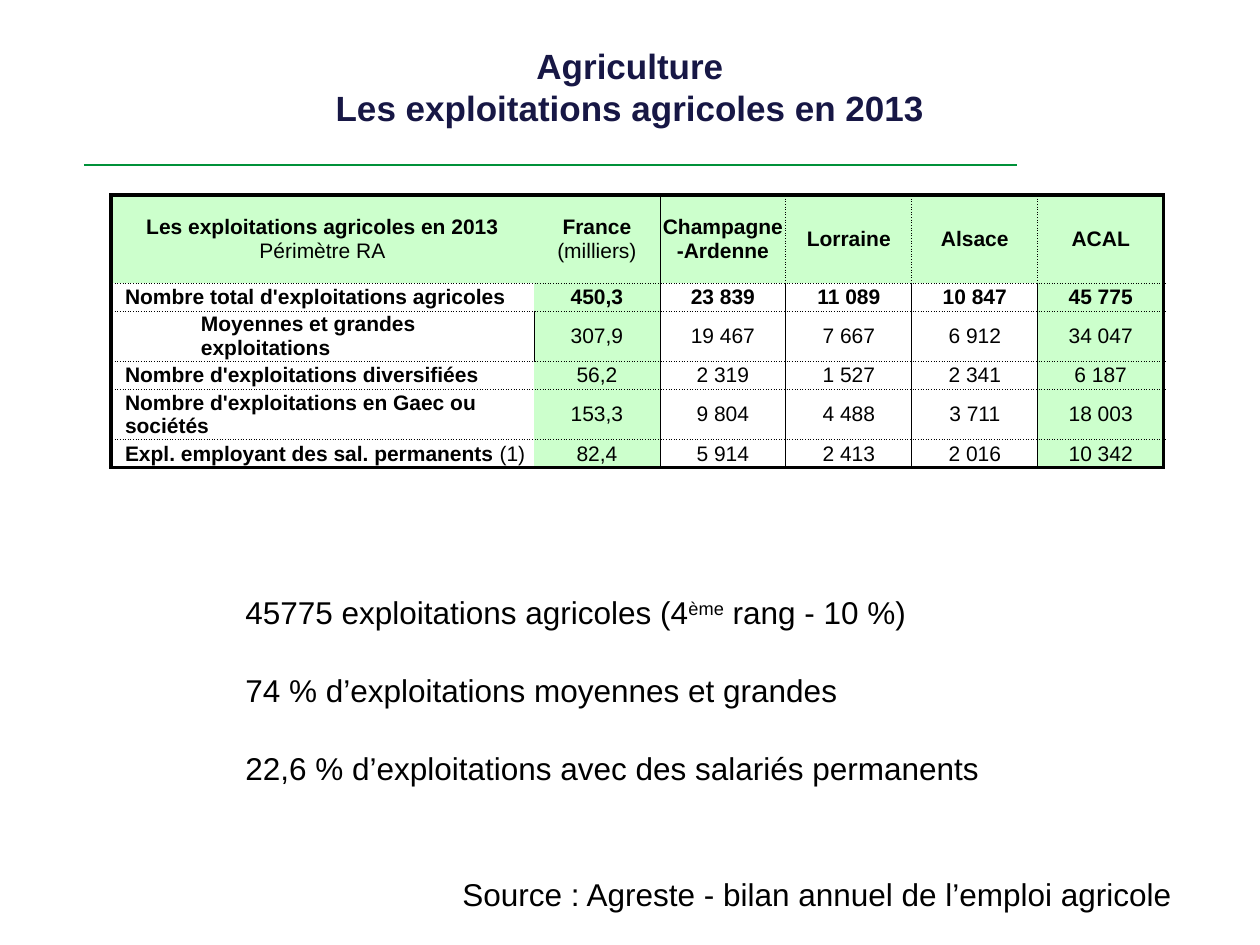
from lxml.etree import SubElement
from pptx import Presentation
from pptx.dml.color import RGBColor
from pptx.enum.shapes import MSO_CONNECTOR
from pptx.enum.text import MSO_ANCHOR, PP_ALIGN
from pptx.oxml.ns import qn
from pptx.util import Pt

PX = 914400 // 126
FONT = "Arial"
BLACK, NAVY, GREEN, MINT = "000000", "171745", "009139", "CCFFCC"
THICK, SOLID, DOTTED = (2, "solid"), (0.5, "solid"), (0.5, "sysDot")

COL_WIDTHS = [62, 361] + [126] * 5
ROW_HEIGHTS = [88, 28, 47, 28, 47, 28]
REGIONS = ["Champagne-Ardenne", "Lorraine", "Alsace", "ACAL"]
ROWS = [
    ("Nombre total d'exploitations agricoles", "450,3", "23 839", "11 089", "10 847", "45 775"),
    ("Moyennes et grandes exploitations", "307,9", "19 467", "7 667", "6 912", "34 047"),
    ("Nombre d'exploitations diversifiées", "56,2", "2 319", "1 527", "2 341", "6 187"),
    ("Nombre d'exploitations en Gaec ou sociétés", "153,3", "9 804", "4 488", "3 711", "18 003"),
    ("Expl. employant des sal. permanents", "82,4", "5 914", "2 413", "2 016", "10 342"),
]
TOTAL_ROW, SUB_ROW = 1, 2
FRANCE_COL, LAST_COL = 2, len(COL_WIDTHS) - 1
LAST_ROW = len(ROW_HEIGHTS) - 1


def px(*lengths):
    return [n * PX for n in lengths]


def rgb(hex_text):
    return RGBColor.from_string(hex_text)


def add_run(p, text, size, bold=False, color=BLACK):
    r = p.add_run()
    r.text = text
    r.font.name, r.font.size, r.font.bold = FONT, Pt(size), bold
    r.font.color.rgb = rgb(color)
    return r


def add_text_frame(s, box, wrap):
    tf = s.shapes.add_textbox(*px(*box)).text_frame
    tf.word_wrap = wrap
    return tf


def add_title(s, box):
    tf = add_text_frame(s, box, True)
    tf.vertical_anchor = MSO_ANCHOR.TOP
    p = tf.paragraphs[0]
    p.alignment = PP_ALIGN.CENTER
    add_run(p, "Agriculture", 20, True, NAVY)
    p.add_line_break()
    add_run(p, "Les exploitations agricoles en 2013", 20, True, NAVY)


def add_rule(s, x1, x2, y):
    line = s.shapes.add_connector(MSO_CONNECTOR.STRAIGHT, *px(x1, y, x2, y))
    line.line.color.rgb = rgb(GREEN)
    line.line.width = Pt(1.5)
    SubElement(line._element.spPr, qn("a:effectLst"))


def vertical_border(row, edge):
    """Border on the column edge numbered from the left, None for no line."""
    if edge in (0, LAST_COL + 1):
        return THICK
    if edge == 1:
        return None
    return DOTTED if row == 0 and edge > FRANCE_COL + 1 else SOLID


def horizontal_border(edge):
    return THICK if edge in (0, LAST_ROW + 1) else DOTTED


def set_borders(cell, row, col):
    sides = {
        "L": vertical_border(row, col),
        "R": vertical_border(row, col + 1),
        "T": horizontal_border(row),
        "B": horizontal_border(row + 1),
    }
    tc_pr = cell._tc.get_or_add_tcPr()
    for side, border in sides.items():
        ln = SubElement(tc_pr, qn(f"a:ln{side}"))
        if border is None:
            SubElement(ln, qn("a:noFill"))
            continue
        width, dash = border
        ln.set("w", str(Pt(width)))
        SubElement(SubElement(ln, qn("a:solidFill")), qn("a:srgbClr")).set("val", BLACK)
        SubElement(ln, qn("a:prstDash")).set("val", dash)


def format_cell(cell, row, col):
    set_borders(cell, row, col)
    if row == 0 or col in (FRANCE_COL, LAST_COL):
        cell.fill.solid()
        cell.fill.fore_color.rgb = rgb(MINT)
    else:
        cell.fill.background()
    cell.margin_left = cell.margin_right = cell.margin_top = cell.margin_bottom = 0
    cell.vertical_anchor = MSO_ANCHOR.MIDDLE
    p = cell.text_frame.paragraphs[0]
    p.font.size = Pt(12)
    if row == 0 or col >= FRANCE_COL:
        p.alignment = PP_ALIGN.CENTER


def fill_header(table):
    p = table.cell(0, 0).text_frame.paragraphs[0]
    add_run(p, "Les exploitations agricoles en 2013", 12, True)
    p.add_line_break()
    add_run(p, "Périmètre RA", 12)
    p = table.cell(0, FRANCE_COL).text_frame.paragraphs[0]
    add_run(p, "France", 12, True)
    add_run(p, " (milliers)", 12)
    for col, region in enumerate(REGIONS, FRANCE_COL + 1):
        add_run(table.cell(0, col).text_frame.paragraphs[0], region, 12, True)


def fill_row(table, row, label, values):
    indented = row == SUB_ROW
    cell = table.cell(row, int(indented))
    cell.margin_left = (28 if indented else 14) * PX
    p = cell.text_frame.paragraphs[0]
    add_run(p, label, 12, True)
    if row == LAST_ROW:
        add_run(p, " (1)", 12)
    for col, value in enumerate(values, FRANCE_COL):
        add_run(table.cell(row, col).text_frame.paragraphs[0], value, 12, row == TOTAL_ROW)


def add_farm_table(s, x, y):
    box = (x, y, sum(COL_WIDTHS), sum(ROW_HEIGHTS))
    table = s.shapes.add_table(len(ROW_HEIGHTS), len(COL_WIDTHS), *px(*box)).table
    table.first_row = table.horz_banding = False
    for column, width in zip(table.columns, px(*COL_WIDTHS)):
        column.width = width
    for table_row, height in zip(table.rows, px(*ROW_HEIGHTS)):
        table_row.height = height
    for row in range(len(ROW_HEIGHTS)):
        for col in range(len(COL_WIDTHS)):
            format_cell(table.cell(row, col), row, col)
        if row != SUB_ROW:
            table.cell(row, 0).merge(table.cell(row, 1))
    fill_header(table)
    for row, (label, *values) in enumerate(ROWS, 1):
        fill_row(table, row, label, values)


def add_key_figures(s, box):
    tf = add_text_frame(s, box, False)
    p = tf.paragraphs[0]
    add_run(p, "45775 exploitations agricoles (4", 18)
    r = add_run(p, "ème", 18)
    r.font._element.set("baseline", "30000")
    add_run(p, " rang - 10 %)", 18)
    for text in ("74 % d’exploitations moyennes et grandes",
                 "22,6 % d’exploitations avec des salariés permanents"):
        p = tf.add_paragraph()
        p.space_before = Pt(23)
        add_run(p, text, 18)


def add_source(s, box):
    tf = add_text_frame(s, box, False)
    add_run(tf.paragraphs[0], "Source : Agreste - bilan annuel de l’emploi agricole", 18)


def main():
    prs = Presentation()
    prs.slide_width, prs.slide_height = px(1260, 945)
    s = prs.slides.add_slide(prs.slide_layouts[6])
    add_rule(s, 84, 1017, 165)
    add_title(s, (63, 38, 1134, 158))
    add_farm_table(s, 111, 195)
    add_source(s, (450, 869, 750, 50))
    add_key_figures(s, (233, 587, 766, 204))
    prs.save("out.pptx")


if __name__ == "__main__":
    main()
